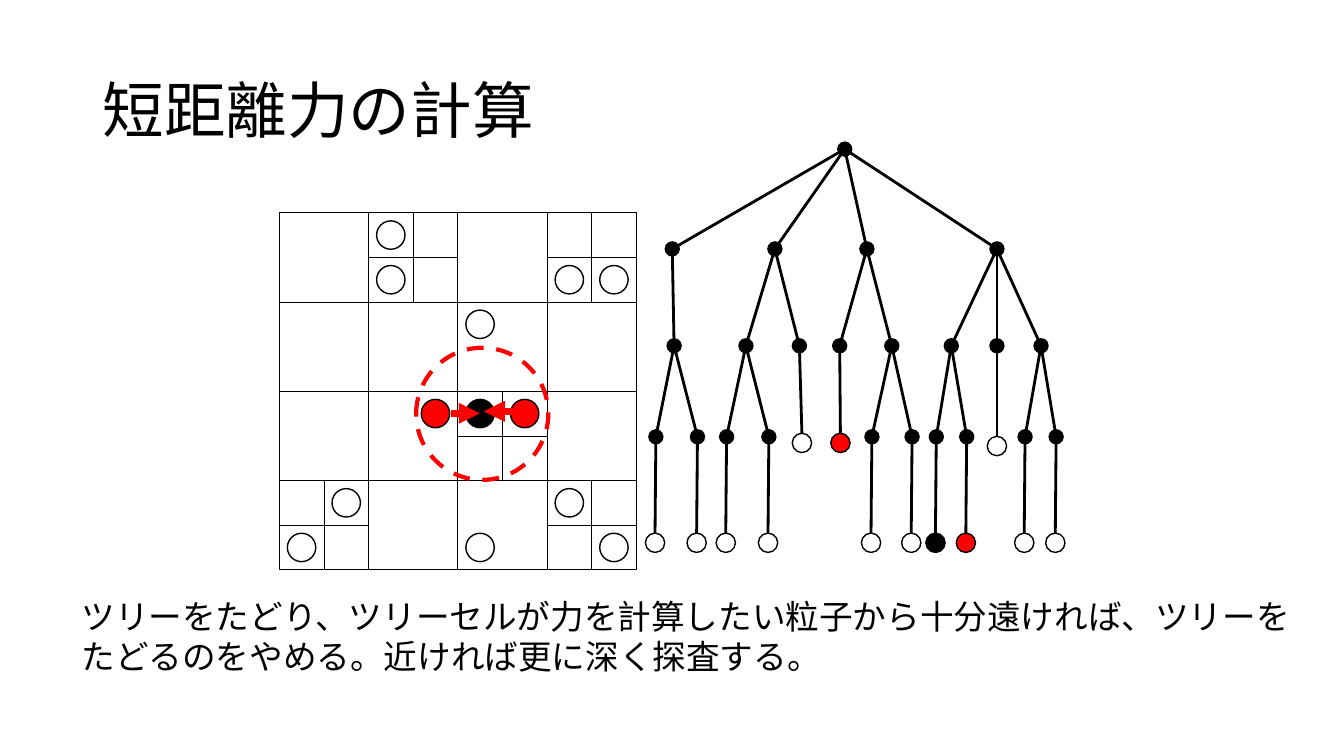
"""Build the slide on short-range force calculation: a cell grid beside its tree."""
from lxml import etree
from pptx import Presentation, util as u
from pptx.dml.color import RGBColor
from pptx.enum import dml, shapes as kinds, text
from pptx.oxml import ns

BLACK, RED = "000000", "FF0000"

deck = Presentation()
deck.slide_width, deck.slide_height = u.Pt(960), u.Pt(540)
slide = deck.slides.add_slide(deck.slide_layouts[6])


def draw_line(x1, y1, x2, y2, weight, color=BLACK, arrow=False):
    line = slide.shapes.add_connector(
        kinds.MSO_CONNECTOR.STRAIGHT, u.Pt(x1), u.Pt(y1), u.Pt(x2), u.Pt(y2))
    line.line.width = u.Pt(weight)
    line.line.color.rgb = RGBColor.from_string(color)
    properties = line._element.spPr
    if arrow:
        etree.SubElement(properties.get_or_add_ln(), ns.qn("a:tailEnd"), type="triangle")
    etree.SubElement(properties, ns.qn("a:effectLst"))
    return line


def draw_shape(kind, cx, cy, size, fill=None, outline=BLACK, weight=1):
    shape = slide.shapes.add_shape(
        kind, u.Pt(cx - size / 2), u.Pt(cy - size / 2), u.Pt(size), u.Pt(size))
    shape.shadow.inherit = False
    if fill:
        shape.fill.solid()
        shape.fill.fore_color.rgb = RGBColor.from_string(fill)
    else:
        shape.fill.background()
    shape.line.color.rgb = RGBColor.from_string(outline)
    shape.line.width = u.Pt(weight)
    return shape


OVAL = kinds.MSO_SHAPE.OVAL

captions = [
    ("短距離力の計算", (66.2, 28.8, 828, 104.4), 44,
     {"word_wrap": True, "vertical_anchor": text.MSO_ANCHOR.MIDDLE}, {"line_spacing": 0.9}),
    ("ツリーをたどり、ツリーセルが力を計算したい粒子から十分遠ければ、ツリーをたどるのをやめる。近ければ更に深く探査する。",
     (51.1, 421.9, 884.9, 65.5), 24,
     {"word_wrap": True, "auto_size": text.MSO_AUTO_SIZE.SHAPE_TO_FIT_TEXT}, {}),
]
for words, box, size, frame_format, paragraph_format in captions:
    frame = slide.shapes.add_textbox(*map(u.Pt, box)).text_frame
    frame.text = words
    paragraph = frame.paragraphs[0]
    font = paragraph.runs[0].font
    font.color.rgb = RGBColor.from_string(BLACK)
    font_format = {"name": "Calibri", "size": u.Pt(size)}
    for target, values in ((frame, frame_format), (paragraph, paragraph_format),
                           (font, font_format)):
        for name, value in values.items():
            setattr(target, name, value)

level_y = [106.5, 177.8, 247, 312, 387.7]
cells = {
    "root": (603.4, 0, None),
    "a": (480.2, 1, "root"), "b": (553.5, 1, "root"),
    "c": (619.2, 1, "root"), "d": (712.1, 1, "root"),
    "a1": (481.5, 2, "a"), "b1": (532.8, 2, "b"), "b2": (571, 2, "b"),
    "c1": (599.8, 2, "c"), "c2": (637, 2, "c"),
    "d1": (679.5, 2, "d"), "d2": (712.1, 2, "d"), "d3": (743.6, 2, "d"),
    "a11": (468.5, 3, "a1"), "a12": (498.2, 3, "a1"),
    "b11": (519, 3, "b1"), "b12": (549.2, 3, "b1"),
    "c21": (622.8, 3, "c2"), "c22": (651.5, 3, "c2"),
    "d11": (668.8, 3, "d1"), "d12": (690.5, 3, "d1"),
    "d31": (732.2, 3, "d3"), "d32": (754.4, 3, "d3"),
}
leaf_size = 13.8
leaves = [(572.8, 316.4, "b2", None), (600.3, 316.4, "c1", RED), (712.1, 318.6, "d2", None)]
leaf_colors = {"d11": BLACK, "d12": RED}
for name, (x, level, parent) in cells.items():
    if level == 3:
        leaves.append((x - 0.6, level_y[4], name, leaf_colors.get(name)))

for x, level, parent in cells.values():
    if parent:
        draw_line(cells[parent][0], level_y[level - 1], x, level_y[level], 2)
for x, y, parent, fill in leaves:
    parent_x, parent_level, _ = cells[parent]
    draw_line(parent_x, level_y[parent_level], x, y - leaf_size / 2, 2)
    draw_shape(OVAL, x, y, leaf_size, fill)
for x, level, parent in cells.values():
    draw_shape(OVAL, x, level_y[level], 10, BLACK)

left, top, side = 199.5, 152, 255
cell, half = side / 4, side / 8
domain = draw_shape(kinds.MSO_SHAPE.RECTANGLE, left + side / 2, top + side / 2, side)
for step in (1, 2, 3):
    offset = step * cell
    row_line = draw_line(left, top + offset, left + side, top + offset, 0.5)
    column_line = draw_line(left + offset, top, left + offset, top + side, 0.5)
    if step == 2:
        row_line.begin_connect(domain, 1)
        row_line.end_connect(domain, 3)
        column_line.begin_connect(domain, 0)
        column_line.end_connect(domain, 2)

for column, row in [(1, 0), (3, 0), (2, 2), (0, 3), (3, 3)]:
    x, y = left + column * cell, top + row * cell
    draw_line(x, y + half, x + cell, y + half, 0.5)
    draw_line(x + half, y, x + half, y + cell, 0.5)

particles = [(2, 0), (2, 1), (6, 1), (7, 1), (4, 2), (3, 4), (4, 4), (5, 4),
             (1, 6), (6, 6), (0, 7), (4, 7), (7, 7)]
particle_colors = {(3, 4): RED, (4, 4): BLACK, (5, 4): RED}
for column, row in particles:
    draw_shape(OVAL, left + (column + 0.5) * half, top + (row + 0.5) * half, 20.3,
               particle_colors.get((column, row)))

for start, end, y in [(366.5, 345.6, 293.8), (321.8, 342.7, 295.2)]:
    draw_line(start, y, end, y, 5, RED, arrow=True)
cutoff = draw_shape(OVAL, 344.5, 295.6, 94.4, outline=RED, weight=3)
cutoff.line.dash_style = dml.MSO_LINE.DASH

deck.save("out.pptx")
